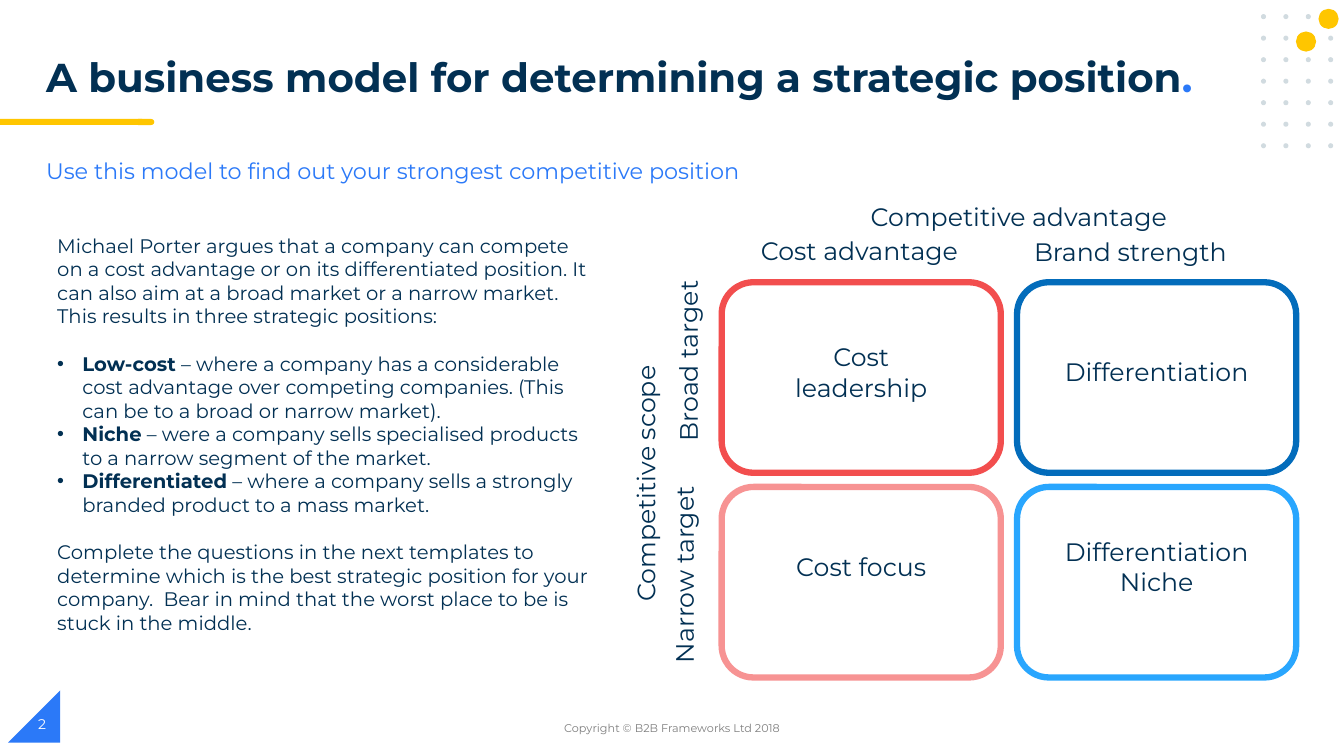
"""Build a slide with a two-by-two model of strategic positions."""
from lxml import etree
from pptx import Presentation
from pptx.dml.color import RGBColor
from pptx.enum.shapes import MSO_SHAPE
from pptx.enum.text import MSO_ANCHOR, PP_ALIGN
from pptx.oxml.ns import qn
from pptx.util import Pt

OVAL, RECTANGLE = MSO_SHAPE.OVAL, MSO_SHAPE.RECTANGLE
TERMINATOR, TRIANGLE = MSO_SHAPE.FLOWCHART_TERMINATOR, MSO_SHAPE.RIGHT_TRIANGLE
ROUNDED = MSO_SHAPE.ROUNDED_RECTANGLE
LEFT, CENTER = PP_ALIGN.LEFT, PP_ALIGN.CENTER
TOP, MIDDLE = MSO_ANCHOR.TOP, MSO_ANCHOR.MIDDLE

FONT = "Montserrat"
COLORS = {
    "navy": "023053", "blue": "2B79F8", "yellow": "FFC600", "dot": "D1DBE0",
    "red": "F24E4E", "pink": "F79393", "deep": "036CBB", "sky": "29A6FE",
    "grey": "7F7F7F", "white": "FFFFFF",
}

TITLE = "A business model for determining a strategic position"
SUBTITLE = "Use this model to find out your strongest competitive position"
INTRO = ("Michael Porter argues that a company can compete on a cost advantage or on its "
         "differentiated position. It can also aim at a broad market or a narrow market. "
         "This results in three strategic positions:")
POSITIONS = [
    ("Low-cost", " – where a company has a considerable cost advantage over competing "
                 "companies. (This can be to a broad or narrow market)."),
    ("Niche", " – were a company sells specialised products to a narrow segment of the market."),
    ("Differentiated", " – where a company sells a strongly branded product to a mass market."),
]
CLOSING = ("Complete the questions in the next templates to determine which is the best "
           "strategic position for your company.  Bear in mind that the worst place to be "
           "is stuck in the middle.")
COPYRIGHT = "Copyright © B2B Frameworks Ltd 2018"
PAGE_NUMBER = "2"

# (column, row, outline, label lines, label width, label top)
QUADRANTS = [
    (0, 0, "red", ["Cost leadership"], 116.6, 240.5),
    (1, 0, "deep", ["Differentiation"], 150.5, 251.3),
    (0, 1, "pink", ["Cost focus"], 116.6, 390.2),
    (1, 1, "sky", ["Differentiation", "Niche"], 157.7, 379.4),
]
# (text, left, top, width, rotation)
AXIS_LABELS = [
    ("Competitive advantage", 614.9, 140.4, 228.2, 0),
    ("Cost advantage", 536.4, 164.2, 157.7, 0),
    ("Brand strength", 731.5, 164.9, 157.7, 0),
    ("Broad target", 412.6, 229, 157.7, 270),
    ("Narrow target", 409.7, 387.4, 157.7, 270),
    ("Competitive scope", 347, 308.2, 228.2, 270),
]
GRID_LEFT, GRID_TOP, CELL_WIDTH, CELL_HEIGHT = 515.5, 201.6, 199.4, 136.1
COLUMN_STEP, ROW_STEP = 211, 146.2
LABEL_HEIGHT, SECTION_GAP = 29, 17
DOT_COLUMNS, DOT_ROWS, DOT_SIZE = 4, 7, 3.6
DOT_LEFT, DOT_TOP, DOT_STEP_X, DOT_STEP_Y = 900.7, 10.1, 16, 15.37


def rgb(name):
    return RGBColor.from_string(COLORS[name])


def add_shape(page, kind, left, top, width, height, fill=None, line=None):
    shape = page.shapes.add_shape(kind, Pt(left), Pt(top), Pt(width), Pt(height))
    shape.shadow.inherit = False
    if fill:
        shape.fill.solid()
        shape.fill.fore_color.rgb = rgb(fill)
    else:
        shape.fill.background()
    if line:
        shape.line.color.rgb = rgb(line)
        shape.line.width = Pt(4.5)
    else:
        shape.line.fill.background()
    return shape


def style(para, size, color, align=LEFT):
    para.alignment = align
    para.font.name = FONT
    para.font.size = Pt(size)
    para.font.color.rgb = rgb(color)


def add_text(page, lines, left, top, width, height, size, color="navy",
             align=LEFT, anchor=TOP, rotation=0):
    box = page.shapes.add_textbox(Pt(left), Pt(top), Pt(width), Pt(height))
    box.rotation = rotation
    frame = box.text_frame
    frame.word_wrap = True
    frame.vertical_anchor = anchor
    frame.text = "\n".join(lines)
    for para in frame.paragraphs:
        style(para, size, color, align)
    return frame


def add_bullet(para):
    properties = para._p.get_or_add_pPr()
    properties.set("marL", str(Pt(18)))
    properties.set("indent", str(-Pt(18)))
    bullet_color = etree.SubElement(properties, qn("a:buClr"))
    etree.SubElement(bullet_color, qn("a:srgbClr"), val=COLORS["navy"])
    etree.SubElement(properties, qn("a:buFont"), typeface="Arial")
    etree.SubElement(properties, qn("a:buChar"), char="•")


def add_decoration(page):
    corner = add_shape(page, TRIANGLE, 5.8, 493.2, 37.2, 37.2, "blue")
    corner.element.spPr.get_or_add_xfrm().set("flipH", "1")
    add_shape(page, TERMINATOR, 96.5, 85, 13.7, 4.3, "yellow")
    add_shape(page, RECTANGLE, 0, 85, 101.5, 4.3, "yellow")
    for row in range(DOT_ROWS):
        for column in range(DOT_COLUMNS):
            add_shape(page, OVAL, DOT_LEFT + column * DOT_STEP_X,
                      DOT_TOP + row * DOT_STEP_Y, DOT_SIZE, DOT_SIZE, "dot")
    for left, top in [(941.8, 6.3), (925.7, 22.5)]:
        add_shape(page, OVAL, left, top, 14.4, 14.4, "yellow")


def add_heading(page):
    title = add_text(page, [TITLE], 25.9, 37.4, 854.6, 43.2, 28.8).paragraphs[0]
    title.line_spacing = 0.9
    title.font.bold = True
    stop = title.add_run()
    stop.text = "."
    stop.font.color.rgb = rgb("blue")
    add_text(page, [SUBTITLE], 25.9, 108.7, 664.6, 26.6, 16, "blue")


def add_body(page):
    frame = add_text(page, [INTRO], 33.8, 163.4, 397.4, 295.9, 14)
    for index, (term, meaning) in enumerate(POSITIONS):
        para = frame.add_paragraph()
        if index == 0:
            para.space_before = Pt(SECTION_GAP)
        add_bullet(para)
        style(para, 14, "navy")
        for words, bold in [(term, True), (meaning, False)]:
            span = para.add_run()
            span.text = words
            span.font.bold = bold
    closing = frame.add_paragraph()
    closing.text = CLOSING
    closing.space_before = Pt(SECTION_GAP)
    style(closing, 14, "navy")


def add_matrix(page):
    for column, row, outline, lines, width, top in QUADRANTS:
        left = GRID_LEFT + column * COLUMN_STEP
        cell = add_shape(page, ROUNDED, left, GRID_TOP + row * ROW_STEP,
                         CELL_WIDTH, CELL_HEIGHT, line=outline)
        cell.adjustments[0] = 0.167
        label_left = left + (CELL_WIDTH - width) / 2
        add_text(page, lines, label_left, top, width, LABEL_HEIGHT, 18, align=CENTER)
    for label, left, top, width, rotation in AXIS_LABELS:
        add_text(page, [label], left, top, width, LABEL_HEIGHT, 18, rotation=rotation)


def main():
    deck = Presentation()
    deck.slide_width, deck.slide_height = Pt(960), Pt(540)
    page = deck.slides.add_slide(deck.slide_layouts[6])
    add_decoration(page)
    add_heading(page)
    add_body(page)
    add_matrix(page)
    add_text(page, [COPYRIGHT], 318.2, 505.4, 324, 28.8, 8, "grey", CENTER, MIDDLE)
    add_text(page, [PAGE_NUMBER], 20.2, 502.6, 216, 28.8, 10, "white", anchor=MIDDLE)
    deck.save("out.pptx")


if __name__ == "__main__":
    main()
